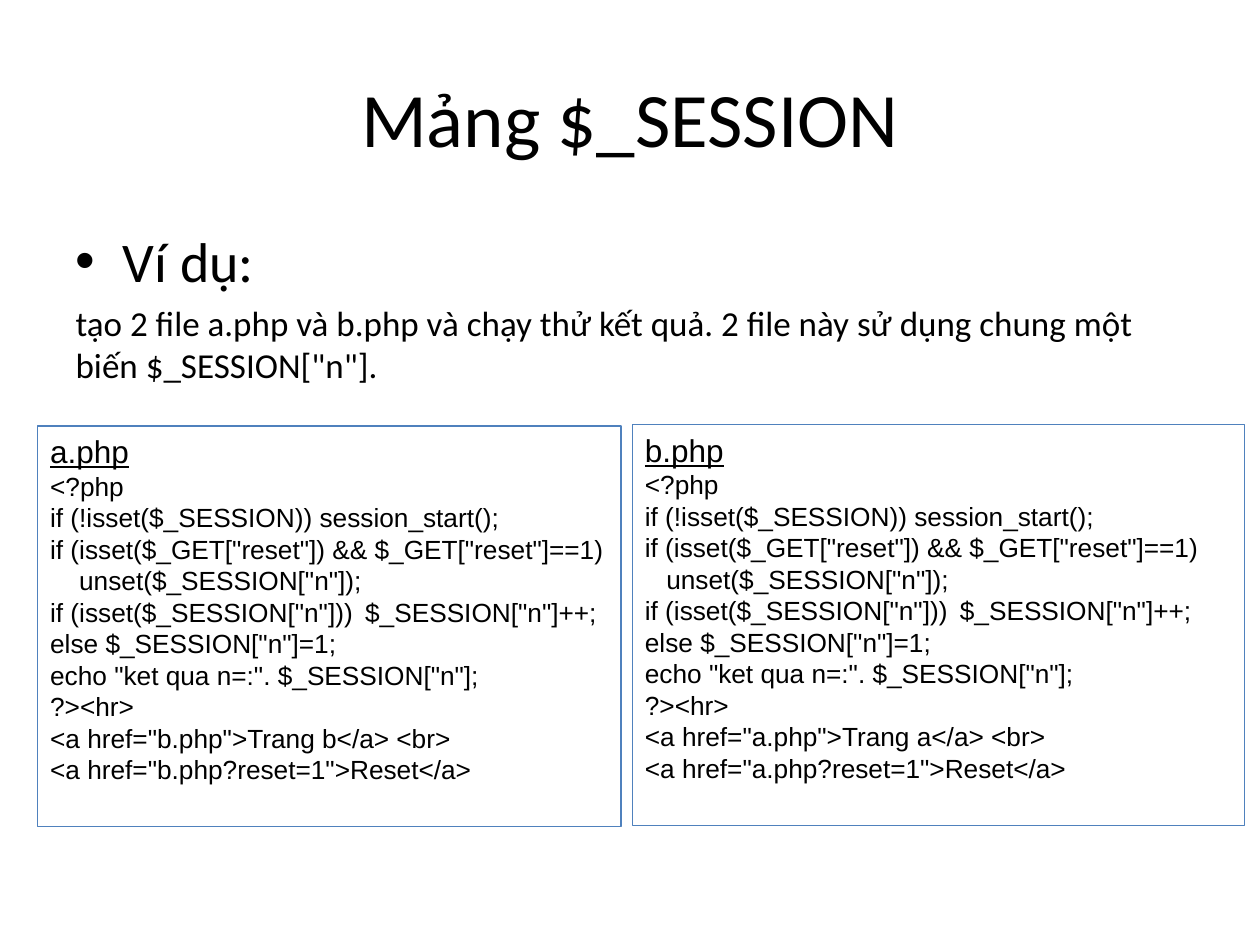
from lxml.etree import SubElement
from pptx import Presentation
from pptx.dml.color import RGBColor
from pptx.enum.shapes import MSO_SHAPE
from pptx.enum.text import MSO_ANCHOR, MSO_AUTO_SIZE, PP_ALIGN
from pptx.oxml.ns import qn
from pptx.util import Inches, Pt

BLACK = RGBColor(0x00, 0x00, 0x00)
BLUE = RGBColor(0x4F, 0x81, 0xBD)


def add_text(text_frame, text, size, font="Calibri", align=PP_ALIGN.LEFT,
             underline=False, left_indent=None, bullet=True):
    paragraph = text_frame.paragraphs[0]
    if paragraph.runs:
        paragraph = text_frame.add_paragraph()
    paragraph.alignment = align
    run = paragraph.add_run()
    run.text = text
    run.font.name = font
    run.font.size = Pt(size)
    run.font.underline = underline
    run.font.color.rgb = BLACK
    properties = paragraph._p.get_or_add_pPr()
    if left_indent is not None:
        properties.set("marL", str(Inches(left_indent)))
        properties.set("indent", "0")
    if not bullet:
        SubElement(properties, qn("a:buNone"))


def place(shape, left, top, width, height):
    shape.left, shape.top = Inches(left), Inches(top)
    shape.width, shape.height = Inches(width), Inches(height)


def add_title(slide, text):
    title = slide.shapes.title
    place(title, 0.5, 0.3, 9, 1.25)
    title.text_frame.vertical_anchor = MSO_ANCHOR.MIDDLE
    add_text(title.text_frame, text, 44, align=PP_ALIGN.CENTER)


def add_body(slide, heading, description):
    body = slide.placeholders[1]
    place(body, 0.5, 1.75, 9, 4.95)
    body.text_frame.auto_size = MSO_AUTO_SIZE.NONE
    add_text(body.text_frame, heading, 32)
    add_text(body.text_frame, description, 20, left_indent=0, bullet=False)


def add_code_box(slide, page, other, left, top, width, unset_indent):
    box = slide.shapes.add_shape(MSO_SHAPE.RECTANGLE, Inches(left), Inches(top),
                                 Inches(width), Inches(3.18))
    box.shadow.inherit = False
    box.fill.background()
    box.line.color.rgb = BLUE
    box.line.width = Pt(0.75)
    text_frame = box.text_frame
    text_frame.word_wrap = True
    text_frame.auto_size = MSO_AUTO_SIZE.SHAPE_TO_FIT_TEXT
    text_frame.vertical_anchor = MSO_ANCHOR.TOP
    add_text(text_frame, f"{page}.php", 18, font="Arial", underline=True)
    code_lines = [
        ("<?php", 0),
        ("if (!isset($_SESSION)) session_start();", 0),
        ('if (isset($_GET["reset"]) && $_GET["reset"]==1)', 0),
        ('unset($_SESSION["n"]);', unset_indent),
        ('if (isset($_SESSION["n"])) \t$_SESSION["n"]++;', 0),
        ('else $_SESSION["n"]=1;', 0),
        ('echo "ket qua n=:". $_SESSION["n"];', 0),
        ("?><hr>", 0),
        (f'<a href="{other}.php">Trang {other}</a> <br>', 0),
        (f'<a href="{other}.php?reset=1">Reset</a>', 0),
    ]
    for line, indent in code_lines:
        add_text(text_frame, line, 15, font="Arial", left_indent=indent)


def main():
    presentation = Presentation()
    presentation.slide_width = Inches(10)
    presentation.slide_height = Inches(7.5)
    slide = presentation.slides.add_slide(presentation.slide_layouts[1])
    add_title(slide, "Mảng $_SESSION")
    add_body(slide, "Ví dụ:",
             "tạo 2 file a.php và b.php và chạy thử kết quả. "
             '2 file này sử dụng chung một biến $_SESSION["n"].')
    add_code_box(slide, "a", "b", left=0.3, top=3.38, width=4.63, unset_indent=0.23)
    add_code_box(slide, "b", "a", left=5.02, top=3.37, width=4.86, unset_indent=0.17)
    presentation.save("out.pptx")


if __name__ == "__main__":
    main()
